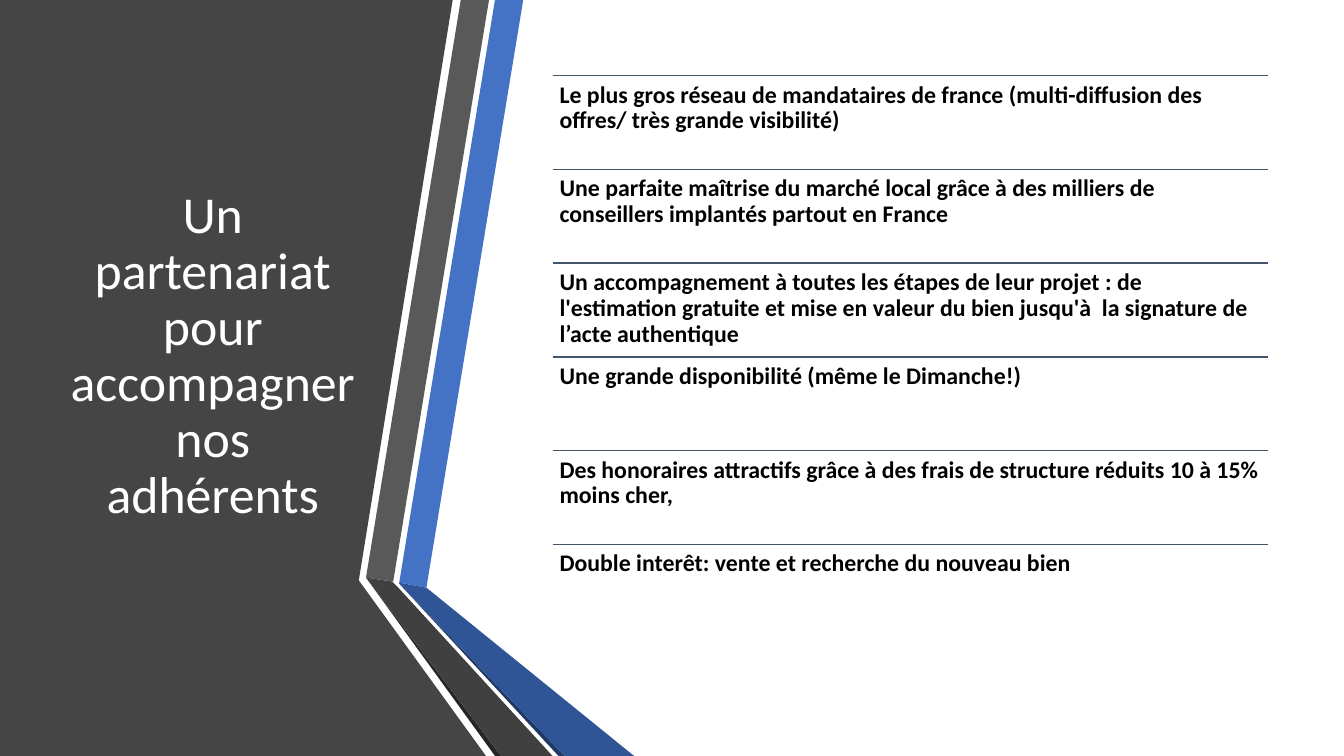
from pptx import Presentation
from pptx.dml.color import RGBColor
from pptx.enum.text import MSO_ANCHOR, MSO_AUTO_SIZE, PP_ALIGN
from pptx.oxml.ns import qn
from pptx.util import Inches, Pt
from lxml.etree import SubElement

LEFT, TOP, WIDTH, ROW_H = 5.48, 0.75, 7.1, 0.93
TITLE = "Un partenariat pour accompagner nos adhérents"
BENEFITS = [
    "Le plus gros réseau de mandataires de france (multi-diffusion des offres/ très grande visibilité)",
    "Une parfaite maîtrise du marché local grâce à des milliers de conseillers implantés partout en France",
    "Un accompagnement à toutes les étapes de leur projet : de l'estimation gratuite et mise en valeur du bien jusqu'à  la signature de l’acte authentique",
    "Une grande disponibilité (même le Dimanche!)",
    "Des honoraires attractifs grâce à des frais de structure réduits 10 à 15% moins cher,",
    "Double interêt: vente et recherche du nouveau bien",
]
PANEL = [(0, 0), (4.49, 0), (3.56, 5.75), (3.56, 5.76), (4.82, 7.5), (0, 7.5)]
# Folded ribbons: colour and outline, back to front
RIBBONS = [
    ("4472C4", [(3.96, 5.78), (4.23, 5.83), (5.19, 0), (4.91, 0)]),
    ("595959", [(4.85, 0), (4.57, 0), (3.63, 5.73), (3.9, 5.77)]),
    ("262626", [(3.63, 5.73), (4.91, 7.5), (4.97, 7.5)]),
    ("203864", [(3.96, 5.79), (5.54, 7.5), (5.6, 7.5)]),
    ("2F5597", [(3.96, 5.79), (5.6, 7.5), (6.29, 7.5), (4.23, 5.83), (3.96, 5.78)]),
    ("404040", [(5.48, 7.5), (3.95, 5.83), (3.89, 5.77), (3.63, 5.73), (4.97, 7.5)]),
]


def rgb(value):
    return RGBColor.from_string(value)


class Deck:
    font = "Calibri"

    def __init__(self):
        self.prs = Presentation()
        self.prs.slide_width, self.prs.slide_height = Inches(13.33), Inches(7.5)
        self.s = self.prs.slides.add_slide(self.prs.slide_layouts[5])

    def group(self):
        return self.s.shapes.add_group_shape().shapes

    def outline(self, shapes, points, color):
        pts = [(Inches(x), Inches(y)) for x, y in points]
        fb = shapes.build_freeform(*pts[0])
        fb.add_line_segments(pts[1:], close=True)
        sp = fb.convert_to_shape()
        sp.shadow.inherit = False
        sp.fill.solid()
        sp.fill.fore_color.rgb = rgb(color)
        sp.line.fill.background()

    def rule(self, shapes, x, y, width, color):
        line = shapes.add_connector(1, Inches(x), Inches(y), Inches(x + width), Inches(y))
        line.line.color.rgb = rgb(color)
        line.line.width = Pt(1)
        SubElement(line._element.spPr, qn("a:effectLst"))

    def fill_text(self, tf, text, size, color, bold=False, align=PP_ALIGN.LEFT):
        tf.word_wrap = True
        tf.auto_size = MSO_AUTO_SIZE.NONE
        p = tf.paragraphs[0]
        p.alignment = align
        p.line_spacing = 0.9
        r = p.add_run()
        r.text = text
        r.font.name, r.font.size, r.font.bold = self.font, Pt(size), bold
        r.font.color.rgb = rgb(color)

    def text(self, shapes, x, y, width, height, text):
        tf = shapes.add_textbox(Inches(x), Inches(y), Inches(width), Inches(height)).text_frame
        tf.margin_left = tf.margin_right = tf.margin_top = tf.margin_bottom = Inches(0.07)
        self.fill_text(tf, text, 17, "000000", bold=True)

    def title(self, x, y, width, height, text):
        sp = self.s.shapes.title
        sp.left, sp.top, sp.width, sp.height = (Inches(v) for v in (x, y, width, height))
        tf = sp.text_frame
        tf.vertical_anchor = MSO_ANCHOR.MIDDLE
        self.fill_text(tf, text, 37, "FFFFFF", align=PP_ALIGN.CENTER)
        # Bring the title in front of the dark panel
        self.s.shapes._spTree.append(sp._element)


def main():
    deck = Deck()

    # Dark panel and ribbons
    deck.outline(deck.s.shapes, PANEL, "454545")
    ribbons = deck.group()
    for color, points in RIBBONS:
        deck.outline(ribbons, points, color)

    # Title
    deck.title(0.59, 0.75, 3.04, 5.58, TITLE)

    # Ruled list of benefits
    rows = deck.group()
    for i, benefit in enumerate(BENEFITS):
        y = TOP + i * ROW_H
        deck.rule(rows, LEFT, y, WIDTH, "44546A")
        deck.text(rows, LEFT, y, WIDTH, ROW_H, benefit)

    deck.prs.save("out.pptx")


if __name__ == "__main__":
    main()
